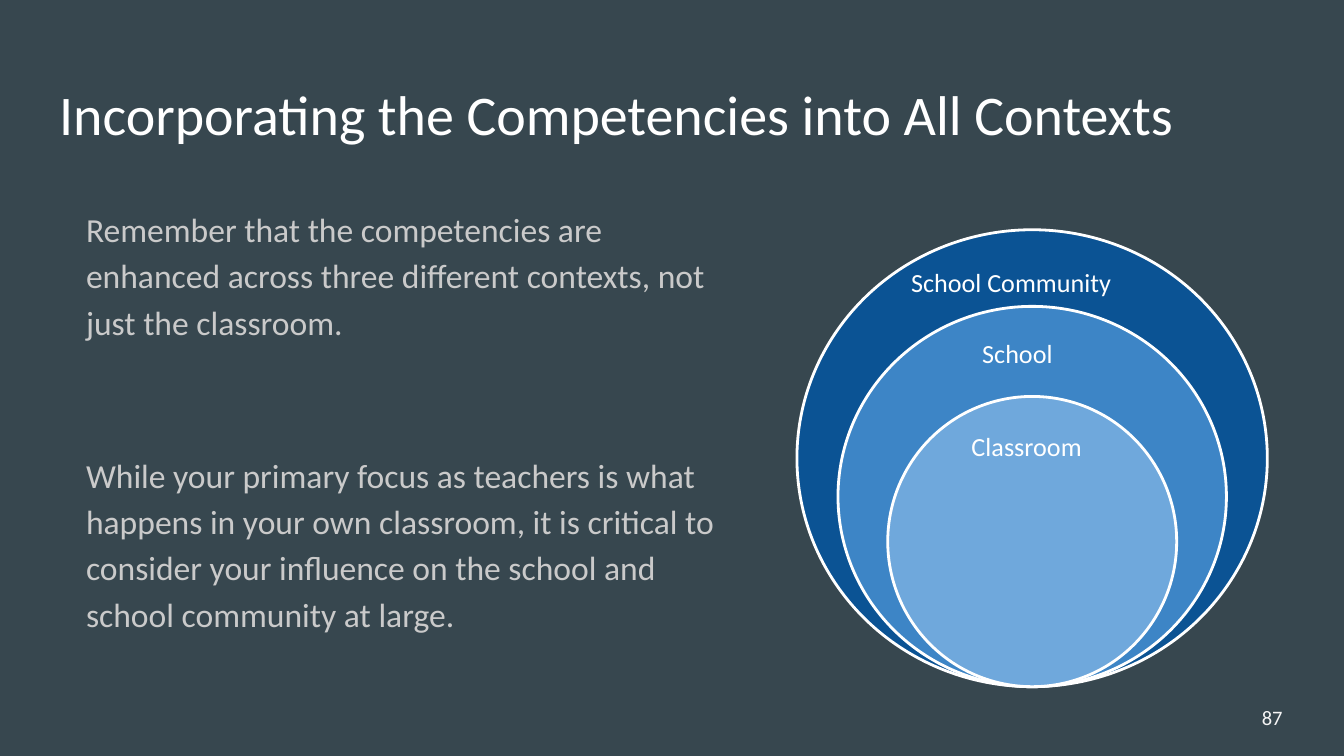
from dataclasses import dataclass

from lxml.etree import SubElement
from pptx import Presentation
from pptx.dml.color import RGBColor
from pptx.enum.shapes import MSO_SHAPE as Preset
from pptx.enum.text import MSO_ANCHOR as Anchor, MSO_AUTO_SIZE as AutoSize, PP_ALIGN as Align
from pptx.oxml.ns import qn
from pptx.util import Inches, Pt

COLORS = {
    "background": "37474F",
    "white": "FFFFFF",
    "body": "CACACA",
    "number": "F5F5F5",
    "community": "0B5394",
    "school": "3D85C6",
    "classroom": "6FA8DC",
}
FRAME_FORMAT = {
    "word_wrap": True,
    "auto_size": AutoSize.NONE,
    "margin_left": Inches(0.1),
    "margin_right": Inches(0.1),
    "margin_top": Inches(0.1),
    "margin_bottom": Inches(0.1),
}
SLIDE_WIDTH = Inches(10)
SLIDE_HEIGHT = SLIDE_WIDTH * 9 // 16
CIRCLES_BOTTOM = 5.11
CIRCLES_CENTER = 7.68


@dataclass(frozen=True)
class Box:
    left: float
    top: float
    width: float
    height: float

    def lengths(self) -> list:
        return [Inches(v) for v in (self.left, self.top, self.width, self.height)]


@dataclass(frozen=True)
class Context:
    label: str
    color: str
    width: float
    height: float
    label_box: Box


CONTEXTS = [
    Context("School Community", "community", 3.5, 3.4, Box(6.68, 1.88, 2.15, 0.32)),
    Context("School", "school", 2.89, 2.83, Box(7.21, 2.41, 0.93, 0.35)),
    Context("Classroom", "classroom", 2.15, 2.16, Box(7.13, 3.1, 2.15, 0.35)),
]
MESSAGES = [
    "Remember that the competencies are enhanced across three different contexts, "
    "not just the classroom.",
    "While your primary focus as teachers is what happens in your own classroom, "
    "it is critical to consider your influence on the school and school community at large.",
]


def rgb(name: str) -> RGBColor:
    return RGBColor.from_string(COLORS[name])


def apply_format(target, values: dict) -> None:
    for key, value in values.items():
        setattr(target, key, value)


def write(holder, lines: list[str], size: float, color: str,
          anchor=Anchor.TOP, paragraph_format: dict | None = None) -> None:
    frame = holder.text_frame
    apply_format(frame, FRAME_FORMAT | {"vertical_anchor": anchor})
    frame.text = "\n".join(lines)
    for paragraph in frame.paragraphs:
        apply_format(paragraph, {"alignment": Align.LEFT} | (paragraph_format or {}))
        for run in paragraph.runs:
            apply_format(run.font, {"name": "Calibri", "size": Pt(size)})
            run.font.color.rgb = rgb(color)


def place(holder, box: Box) -> None:
    apply_format(holder, dict(zip(("left", "top", "width", "height"), box.lengths())))


def remove_bullets(holder) -> None:
    for paragraph in holder.text_frame.paragraphs:
        properties = paragraph._p.get_or_add_pPr()
        properties.set("marL", "0")
        properties.set("indent", "0")
        SubElement(properties, qn("a:buNone"))


def add_label(slide, text: str, box: Box, size: float, color: str, anchor=Anchor.TOP) -> None:
    write(slide.shapes.add_textbox(*box.lengths()), [text], size, color, anchor)


def add_circle(slide, context: Context) -> None:
    box = Box(CIRCLES_CENTER - context.width / 2, CIRCLES_BOTTOM - context.height,
              context.width, context.height)
    circle = slide.shapes.add_shape(Preset.OVAL, *box.lengths())
    circle.shadow.inherit = False
    circle.fill.solid()
    circle.fill.fore_color.rgb = rgb(context.color)
    circle.line.color.rgb = rgb("white")
    circle.line.width = Pt(1.5)


def main() -> None:
    deck = Presentation()
    apply_format(deck, {"slide_width": SLIDE_WIDTH, "slide_height": SLIDE_HEIGHT})
    slide = deck.slides.add_slide(deck.slide_layouts[1])
    slide.background.fill.solid()
    slide.background.fill.fore_color.rgb = rgb("background")

    title = slide.shapes.title
    place(title, Box(0.34, 0.49, 9.32, 0.63))
    write(title, ["Incorporating the Competencies into All Contexts"], 30, "white")

    body = slide.placeholders[1]
    place(body, Box(0.54, 1.41, 5.1, 3.71))
    spacing = {"line_spacing": 1.15, "space_before": Pt(0), "space_after": Pt(57)}
    write(body, MESSAGES, 18, "body", paragraph_format=spacing)
    remove_bullets(body)

    for context in CONTEXTS:
        add_circle(slide, context)
    for context in CONTEXTS:
        add_label(slide, context.label, context.label_box, 14, "white")
    add_label(slide, "87", Box(9.29, 5.12, 0.6, 0.43), 11, "number", Anchor.MIDDLE)

    deck.save("out.pptx")


if __name__ == "__main__":
    main()
